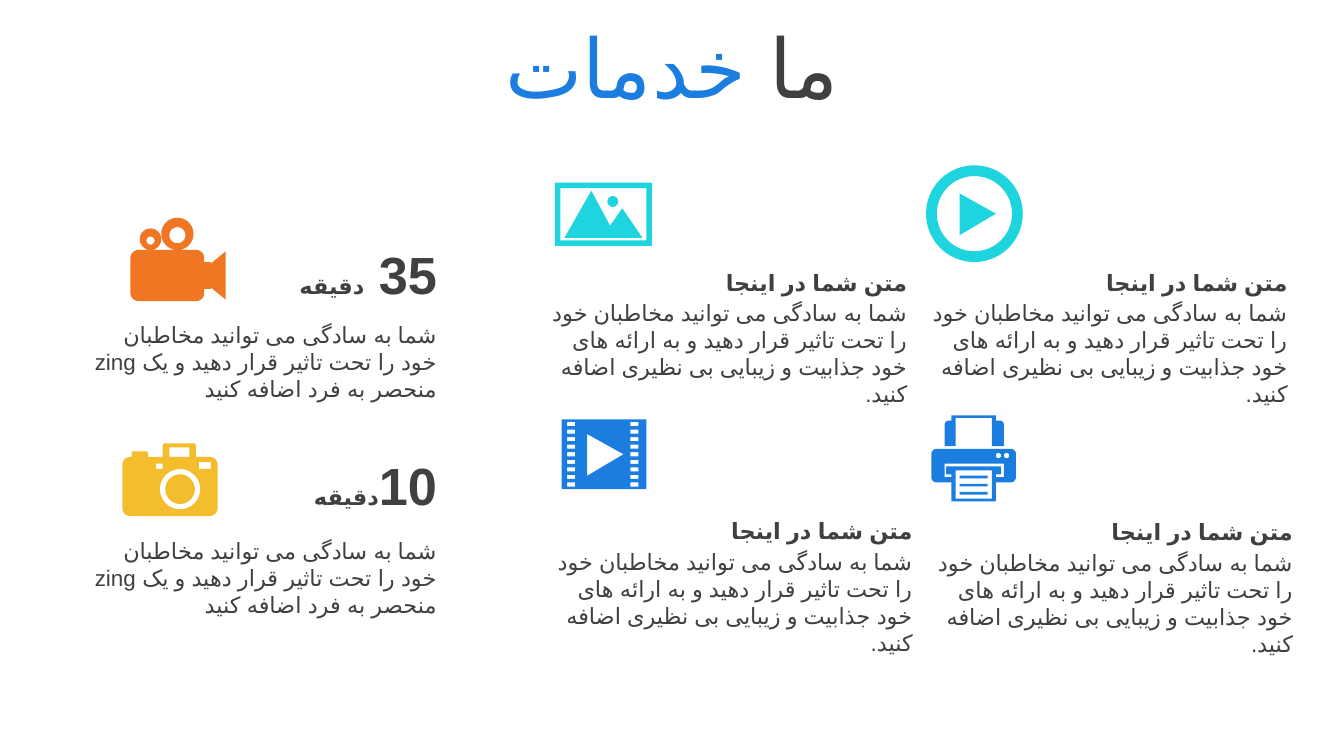
import math

import pptx
import pptx.dml.color
import pptx.enum.text
import pptx.oxml.ns
import pptx.util
from lxml import etree

Inches = pptx.util.Inches
ALIGN = pptx.enum.text.PP_ALIGN
ANCHOR = pptx.enum.text.MSO_ANCHOR
AUTO_SIZE = pptx.enum.text.MSO_AUTO_SIZE

# Content
FONT, LANGUAGE = "Arial", "fa-IR"
GRAY, BLUE, CYAN, ORANGE, YELLOW = "404040", "1C7DE1", "1ED4DE", "F07624", "F4BD2D"
TITLE = [("ما ", 44, False, GRAY), ("خدمات", 44, False, BLUE)]
HEADING = "متن شما در اینجا"
SERVICE = ("شما به سادگی می توانید مخاطبان خود را تحت تاثیر قرار دهید "
           "و به ارائه های خود جذابیت و زیبایی بی نظیری اضافه کنید.")
DURATION = ("شما به سادگی می توانید مخاطبان خود را تحت تاثیر قرار دهید "
            "و یک zing منحصر به فرد اضافه کنید")
# number, unit, top of the number, top of the description
DURATIONS = [("35 ", "دقیقه", 1.8, 2.34), ("10", "دقیقه", 3.37, 3.95)]
SERVICE_CORNERS = [(3.98, 1.95), (4.02, 3.8), (6.81, 1.95), (6.85, 3.81)]


# Outlines, as lists of points in inches
def box(left, top, right, bottom):
    return [(left, top), (right, top), (right, bottom), (left, bottom)]


def circle(x, y, radius, steps=48):
    angles = [2 * math.pi * step / steps for step in range(steps)]
    return [(x + radius * math.cos(a), y + radius * math.sin(a)) for a in angles]


def rounded(corners, steps=6):
    """Polygon whose corners are (x, y) or (x, y, radius)."""
    points = []
    for index, (x, y, *radius) in enumerate(corners):
        if not radius:
            points.append((x, y))
            continue
        arms = []
        for neighbour in (corners[index - 1], corners[(index + 1) % len(corners)]):
            dx, dy = neighbour[0] - x, neighbour[1] - y
            ratio = radius[0] / math.hypot(dx, dy)
            arms.append((dx * ratio, dy * ratio))
        (ax, ay), (bx, by) = arms
        for step in range(steps + 1):
            angle = math.pi / 2 * step / steps
            a, b = 1 - math.sin(angle), 1 - math.cos(angle)
            points.append((x + ax * a + bx * b, y + ay * a + by * b))
    return points


# Icons: inner outlines cut holes in the outer ones
printer = [
    rounded([(6.93, 3.34, 0.04), (7.56, 3.34, 0.04), (7.56, 3.59, 0.04), (7.41, 3.59),
             (7.41, 3.73), (7.08, 3.73), (7.08, 3.59), (6.93, 3.59, 0.04)]),
    rounded([(7.08, 3.09), (7.41, 3.09), (7.41, 3.13), (7.47, 3.13, 0.03), (7.47, 3.32),
             (7.38, 3.32), (7.38, 3.11), (7.11, 3.11), (7.11, 3.32), (7.03, 3.32),
             (7.03, 3.13, 0.03), (7.08, 3.13)]),
    [(7.03, 3.45), (7.03, 3.55), (7.08, 3.55), (7.08, 3.53), (7.04, 3.53), (7.04, 3.47),
     (7.45, 3.47), (7.45, 3.53), (7.41, 3.53), (7.41, 3.55), (7.47, 3.55), (7.47, 3.45)],
    box(7.11, 3.5, 7.38, 3.71),
    *[box(7.14, top, 7.35, top + 0.02) for top in (3.54, 3.6, 3.66)],
    *[circle(x, 3.39, 0.02) for x in (7.43, 7.49)],
]
film = [
    box(4.18, 3.12, 4.81, 3.64),
    [(4.37, 3.23), (4.37, 3.54), (4.64, 3.38)],
    *[box(left, 3.14 + row * 0.45 / 8, left + 0.06, 3.17 + row * 0.45 / 8)
      for left in (4.22, 4.69) for row in range(9)],
]
photo_camera = [
    rounded([(0.91, 3.4, 0.06), (0.98, 3.4), (0.98, 3.36, 0.01), (1.1, 3.36, 0.01),
             (1.1, 3.4), (1.21, 3.4), (1.21, 3.3, 0.02), (1.46, 3.3, 0.02), (1.46, 3.4),
             (1.62, 3.4, 0.06), (1.62, 3.84, 0.06), (0.91, 3.84, 0.06)]),
    circle(1.34, 3.64, 0.15), circle(1.34, 3.64, 0.11),
    box(1.16, 3.45, 1.21, 3.49), box(1.48, 3.44, 1.57, 3.49), box(1.26, 3.33, 1.41, 3.4),
]
video_camera = [
    rounded([(0.97, 1.86, 0.06), (1.52, 1.86, 0.06), (1.52, 1.95), (1.57, 1.95),
             (1.57, 1.96), (1.68, 1.87), (1.68, 2.23), (1.57, 2.14), (1.57, 2.15),
             (1.52, 2.15), (1.52, 2.24, 0.06), (0.97, 2.24, 0.06)]),
    circle(1.12, 1.78, 0.08), circle(1.12, 1.79, 0.03),
    circle(1.32, 1.74, 0.12), circle(1.32, 1.75, 0.06),
]
play_button = [
    circle(7.25, 1.59, 0.36), circle(7.25, 1.59, 0.28),
    [(7.14, 1.44), (7.41, 1.59), (7.14, 1.75)],
]
landscape = [
    box(4.13, 1.36, 4.85, 1.83), box(4.17, 1.4, 4.81, 1.79), circle(4.56, 1.5, 0.04),
    [(4.4, 1.42), (4.54, 1.68), (4.63, 1.55), (4.78, 1.77), (4.2, 1.77)],
]
ICONS = [(printer, BLUE), (film, BLUE), (photo_camera, YELLOW),
         (video_camera, ORANGE), (play_button, CYAN), (landscape, CYAN)]


# Drawing helpers
def color(value):
    return pptx.dml.color.RGBColor.from_string(value)


def write(shape, runs, alignment, frame_format):
    """Fill a shape with one right-to-left paragraph."""
    frame = shape.text_frame
    for name, value in frame_format.items():
        setattr(frame, name, value)
    paragraph = frame.paragraphs[0]
    paragraph.alignment = alignment
    paragraph._p.get_or_add_pPr().set("rtl", "1")
    for text, size, bold, fill in runs:
        run = paragraph.add_run()
        run.text = text
        font_format = {"name": FONT, "size": pptx.util.Pt(size), "bold": bold}
        for name, value in font_format.items():
            setattr(run.font, name, value)
        run.font.color.rgb = color(fill)
        # Persian language and complex-script font
        properties = run._r.get_or_add_rPr()
        properties.set("lang", LANGUAGE)
        complex_font = etree.SubElement(properties, pptx.oxml.ns.qn("a:cs"))
        complex_font.set("typeface", FONT)


def add_text(slide, position, runs, **frame_format):
    shape = slide.shapes.add_textbox(*map(Inches, position))
    write(shape, runs, ALIGN.RIGHT,
          {"word_wrap": True, "auto_size": AUTO_SIZE.SHAPE_TO_FIT_TEXT, **frame_format})


def add_icon(slide, outlines, fill):
    builder = None
    for outline in outlines:
        start, *rest = [(Inches(x), Inches(y)) for x, y in outline]
        if builder is None:
            builder = slide.shapes.build_freeform(*start)
        else:
            builder.move_to(*start)
        builder.add_line_segments(rest, close=True)
    shape = builder.convert_to_shape()
    shape.shadow.inherit = False
    shape.fill.solid()
    shape.fill.fore_color.rgb = color(fill)
    shape.line.fill.background()


def main():
    presentation = pptx.Presentation()
    presentation.slide_width = Inches(10)
    presentation.slide_height = Inches(10 * 9 / 16)
    slide = presentation.slides.add_slide(presentation.slide_layouts[5])

    # Title
    title = slide.shapes.title
    title_place = {"left": 0, "top": 0, "width": 10, "height": 0.97}
    for name, value in title_place.items():
        setattr(title, name, Inches(value))
    write(title, TITLE, ALIGN.CENTER,
          {"vertical_anchor": ANCHOR.MIDDLE, "auto_size": AUTO_SIZE.NONE})

    # Icons
    for outlines, fill in ICONS:
        add_icon(slide, outlines, fill)

    # Durations on the left
    for number, unit, number_top, text_top in DURATIONS:
        add_text(slide, (0.59, text_top, 2.76, 0.71), [(DURATION, 12, False, GRAY)])
        add_text(slide, (2.02, number_top, 1.33, 0.47),
                 [(number, 28, True, GRAY), (unit, 12, True, GRAY)],
                 vertical_anchor=ANCHOR.MIDDLE, margin_top=0, margin_bottom=0)

    # Services
    for left, top in SERVICE_CORNERS:
        add_text(slide, (left, top + 0.23, 2.87, 0.71), [(SERVICE, 12, False, GRAY)])
        add_text(slide, (left, top, 2.87, 0.3), [(HEADING, 12, True, GRAY)])

    presentation.save("out.pptx")


if __name__ == "__main__":
    main()
